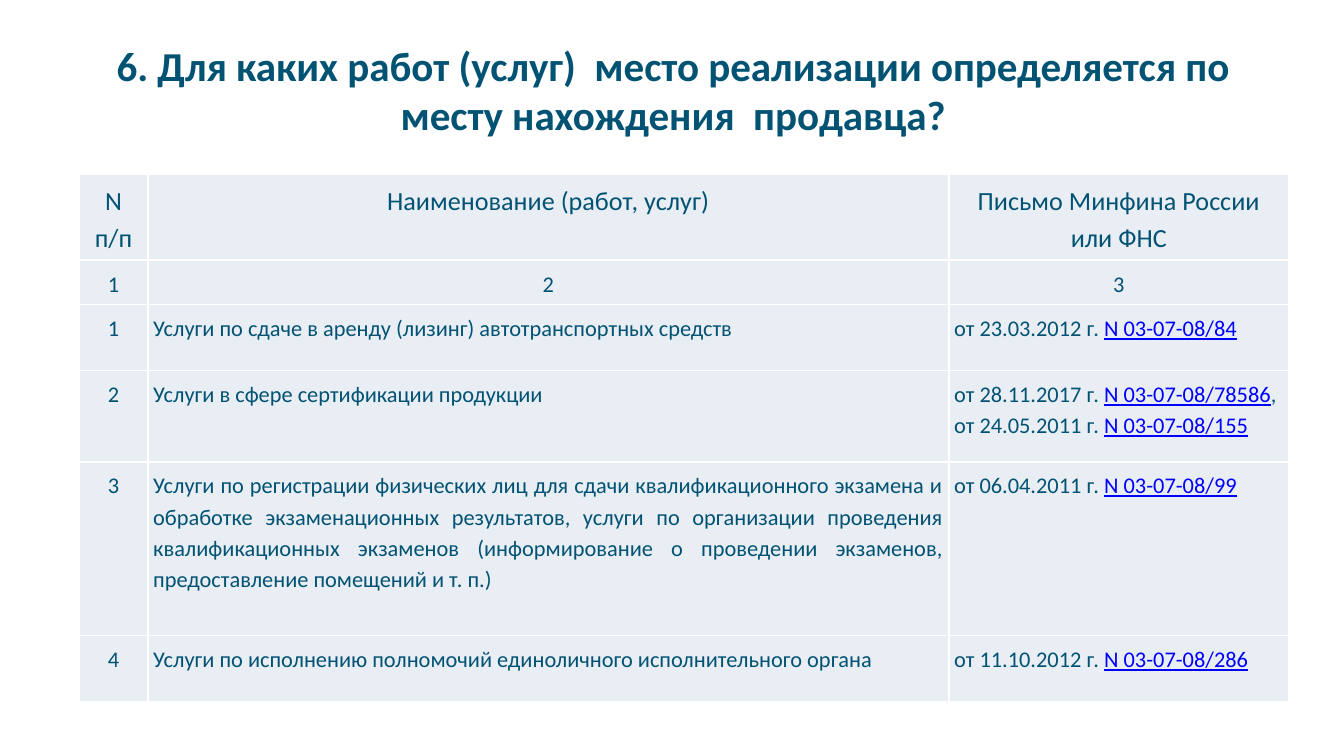
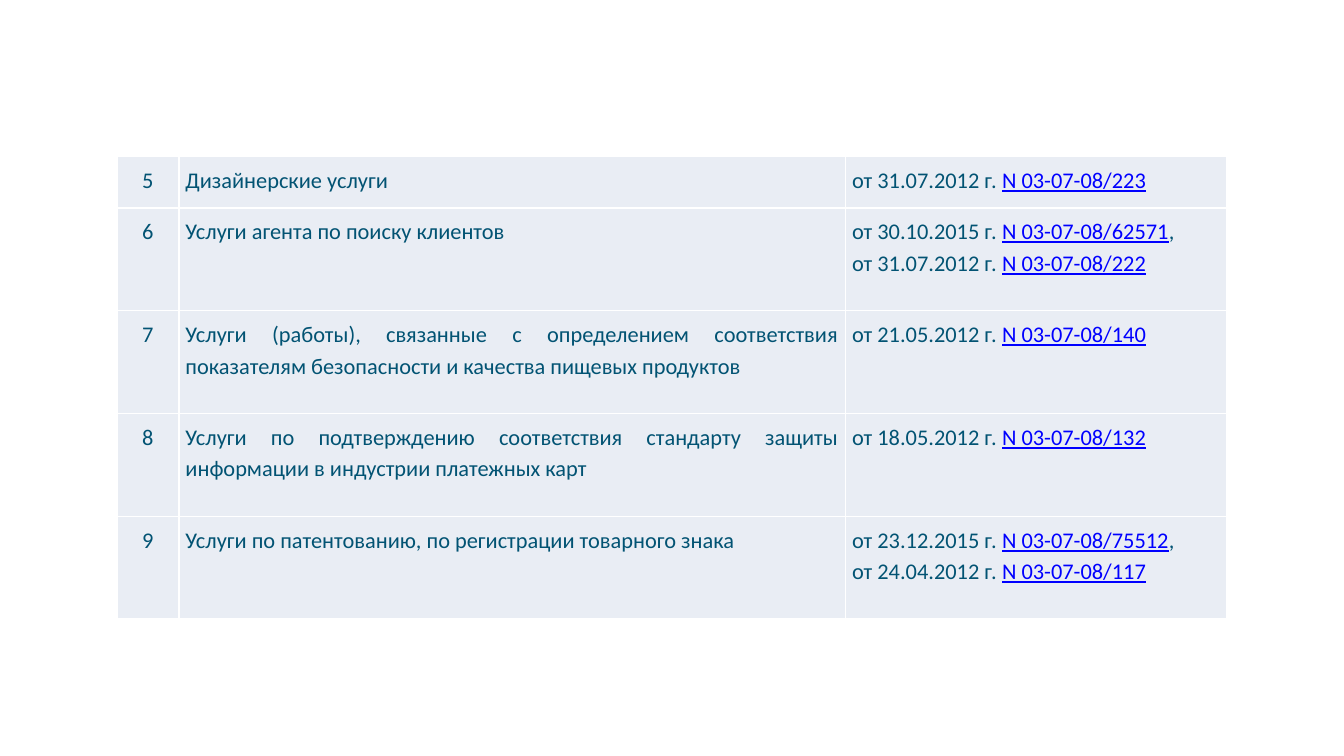
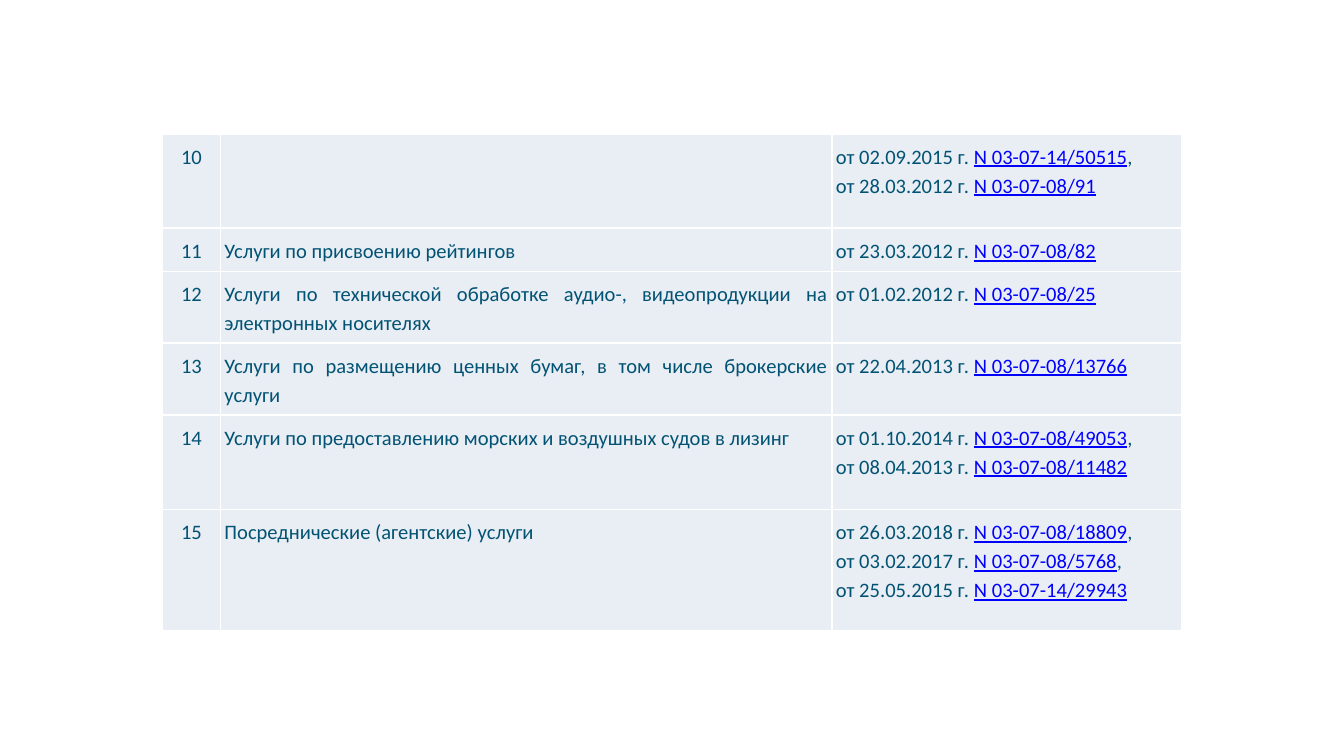
"""Build three slides that list services taxed at the seller's place."""
import pptx
import pptx.util
import pptx.dml.color
import pptx.enum.text
import pptx.oxml

WIDE = pptx.util.Inches(10)
HIGH = pptx.util.Inches(5.625)
FONT = "Calibri"
HUES = {"text": "025373", "link": "0000FF", "cell": "E9EDF4", "edge": "FFFFFF"}
ALIGN = pptx.enum.text.PP_ALIGN
SIDES = (ALIGN.CENTER, ALIGN.JUSTIFY, ALIGN.LEFT)

TITLE = ("6. Для каких работ (услуг)  место реализации определяется по "
         "месту нахождения  продавца?")
HEADS = [
    ("N п/п", "Наименование (работ, услуг)", "Письмо Минфина России или ФНС"),
    ("1", "2", "3"),
]
FIRST = [
    ("1", "Услуги по сдаче в аренду (лизинг) автотранспортных средств",
     "от 23.03.2012 г. |N 03-07-08/84"),
    ("2", "Услуги в сфере сертификации продукции",
     "от 28.11.2017 г. |N 03-07-08/78586|, от 24.05.2011 г. |N 03-07-08/155"),
    ("3", "Услуги по регистрации физических лиц для сдачи квалификационного "
     "экзамена и обработке экзаменационных результатов, услуги по организации "
     "проведения квалификационных экзаменов (информирование о проведении "
     "экзаменов, предоставление помещений и т. п.)",
     "от 06.04.2011 г. |N 03-07-08/99"),
    ("4", "Услуги по исполнению полномочий единоличного исполнительного органа",
     "от 11.10.2012 г. |N 03-07-08/286"),
]
NEXT = [
    ("5", "Дизайнерские услуги", "от 31.07.2012 г. |N 03-07-08/223"),
    ("6", "Услуги агента по поиску клиентов",
     "от 30.10.2015 г. |N 03-07-08/62571|,\nот 31.07.2012 г. |N 03-07-08/222"),
    ("7", "Услуги (работы), связанные с определением соответствия показателям "
     "безопасности и качества пищевых продуктов",
     "от 21.05.2012 г. |N 03-07-08/140"),
    ("8", "Услуги по подтверждению соответствия стандарту защиты информации "
     "в индустрии платежных карт",
     "от 18.05.2012 г. |N 03-07-08/132"),
    ("9", "Услуги по патентованию, по регистрации товарного знака",
     "от 23.12.2015 г. |N 03-07-08/75512|,\nот 24.04.2012 г. |N 03-07-08/117"),
]
LAST = [
    ("10", "",
     "от 02.09.2015 г. |N 03-07-14/50515|,\nот 28.03.2012 г. |N 03-07-08/91"),
    ("11", "Услуги по присвоению рейтингов", "от 23.03.2012 г. |N 03-07-08/82"),
    ("12", "Услуги по технической обработке аудио-, видеопродукции "
     "на электронных носителях",
     "от 01.02.2012 г. |N 03-07-08/25"),
    ("13", "Услуги по размещению ценных бумаг, в том числе брокерские услуги",
     "от 22.04.2013 г. |N 03-07-08/13766"),
    ("14", "Услуги по предоставлению морских и воздушных судов в лизинг",
     "от 01.10.2014 г. |N 03-07-08/49053|,\nот 08.04.2013 г. |N 03-07-08/11482"),
    ("15", "Посреднические (агентские) услуги",
     "от 26.03.2018 г. |N 03-07-08/18809|,\nот 03.02.2017 г. |N 03-07-08/5768|,\n"
     "от 25.05.2015 г. |N 03-07-14/29943"),
]


def hue(name):
    """Return a named colour."""
    return pptx.dml.color.RGBColor.from_string(HUES[name])


def across(share):
    """Turn percent of the slide's width into a length."""
    return round(WIDE * share / 100)


def down(share):
    """Turn percent of the slide's height into a length."""
    return round(HIGH * share / 100)


def style(para, size, align, bold=False):
    """Set the shared font and the alignment of a paragraph."""
    para.alignment = align
    para.font.name = FONT
    para.font.size = pptx.util.Pt(size)
    para.font.bold = bold
    para.font.color.rgb = hue("text")


def add_title(slide, text):
    """Add a centred bold title."""
    box = slide.shapes.add_textbox(across(5.1), down(3.5), across(90), down(16.7))
    frame = box.text_frame
    frame.word_wrap = True
    frame.vertical_anchor = pptx.enum.text.MSO_ANCHOR.MIDDLE
    frame.text = text
    style(frame.paragraphs[0], 22, ALIGN.CENTER, True)


def add_edges(cell):
    """Draw thin lines on the four sides of a cell."""
    props = cell._tc.get_or_add_tcPr()
    for side in "LRTB":
        props.append(pptx.oxml.parse_xml(
            f'<a:ln{side} xmlns:a="http://schemas.openxmlformats.org/drawingml/2006/main"'
            f' w="12700"><a:solidFill><a:srgbClr val="{HUES["edge"]}"/></a:solidFill>'
            f'</a:ln{side}>'))


def fill_cell(cell, text, size, align, inset):
    """Fill a cell; every second part between bars is a letter number."""
    add_edges(cell)
    cell.fill.solid()
    cell.fill.fore_color.rgb = hue("cell")
    cell.margin_left = cell.margin_right = pptx.util.Inches(inset)
    cell.margin_top = cell.margin_bottom = pptx.util.Inches(0.05)
    frame = cell.text_frame
    for i, line in enumerate(text.split("\n")):
        para = frame.add_paragraph() if i else frame.paragraphs[0]
        style(para, size, align)
        para.line_spacing = 1.15
        for j, part in enumerate(line.split("|")):
            if not part:
                continue
            run = para.add_run()
            run.text = part
            if j % 2:
                run.font.underline = True
                run.font.color.rgb = hue("link")


def add_list(slide, left, top, cols, rows, data, size, inset, heads=()):
    """Add a table of services, with centred head rows if given."""
    lines = [*heads, *data]
    grid = slide.shapes.add_table(
        len(rows), len(cols), across(left), down(top),
        across(sum(cols)), down(sum(rows))).table
    grid.first_row = grid.horz_banding = False
    for col, share in zip(grid.columns, cols):
        col.width = across(share)
    for row, share in zip(grid.rows, rows):
        row.height = down(share)
    for r, line in enumerate(lines):
        for c, text in enumerate(line):
            align = ALIGN.CENTER if r < len(heads) else SIDES[c]
            points = size + 2 if heads and r == 0 else size
            fill_cell(grid.cell(r, c), text, points, align, inset)


def main():
    """Build and save the slides."""
    deck = pptx.Presentation()
    deck.slide_width, deck.slide_height = WIDE, HIGH
    one, two, three = (deck.slides.add_slide(deck.slide_layouts[6]) for _ in range(3))
    add_title(one, TITLE)
    add_list(one, 5.9, 23.1, (5.1, 59.6, 25.3), (11.2, 5.8, 8.7, 12.1, 23, 8.7),
             FIRST, 12, 0.04, HEADS)
    add_list(two, 8.7, 20.7, (4.6, 49.6, 28.4), (6.8, *[13.6] * 4), NEXT, 12, 0.05)
    add_list(three, 12.1, 17.7, (4.3, 45.5, 26), (12.5, 5.7, 9.5, 9.5, 12.5, 16.1),
             LAST, 11, 0.03)
    deck.save("out.pptx")


if __name__ == "__main__":
    main()
